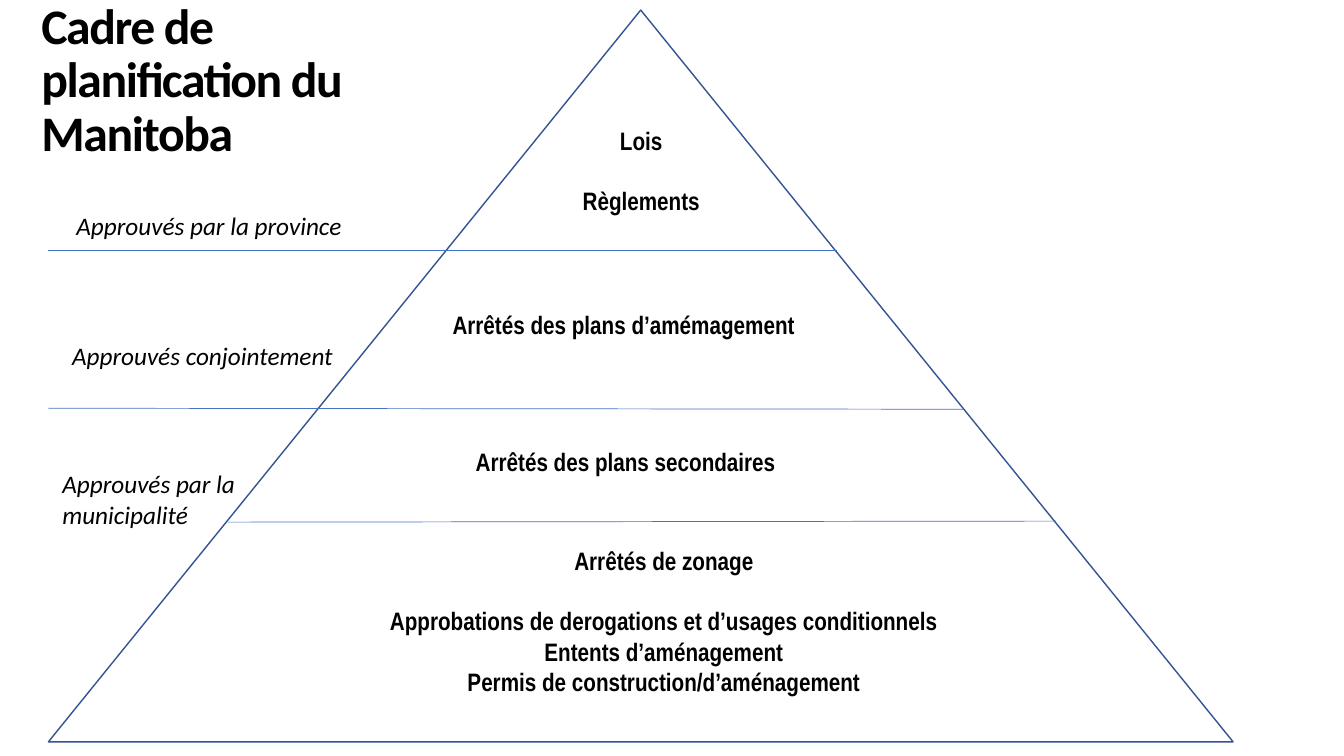
from lxml import etree
from pptx import Presentation
from pptx import util as u
from pptx.dml.color import RGBColor
from pptx.enum import shapes, text
from pptx.oxml import ns

BLACK = RGBColor(0, 0, 0)
WHITE = RGBColor(255, 255, 255)
EDGE = RGBColor(0x32, 0x54, 0x91)
RULE = RGBColor(0x44, 0x72, 0xC4)
LEFT, MID, RIGHT = text.PP_ALIGN.LEFT, text.PP_ALIGN.CENTER, text.PP_ALIGN.RIGHT
BODY, SIDE = "Arial Narrow", "Calibri"
LINE = 21.6  # height of one line of 18-point text, in points

TITLE = "Cadre de planification du Manitoba"
RULES = [  # start x, y, end x, y
    (0.48, 2.48, 8.3, 2.48),
    (0.48, 4.05, 9.56, 4.06),
    (2.26, 5.18, 10.47, 5.17),
]
# box, alignment, groups of lines (a line of space between groups)
LEVELS = [
    ((5.43, 1.19, 1.86, 1.01), MID, [["Lois"], ["Règlements"]]),
    ((4.39, 3.02, 4.1, 0.4), LEFT, [["Arrêtés des plans d’amémagement"]]),
    ((4.62, 4.38, 4.1, 0.4), LEFT, [["Arrêtés des plans secondaires"]]),
    ((2.7, 5.36, 7.77, 1.62), MID, [
        ["Arrêtés de zonage"],
        ["Approbations de derogations et d’usages conditionnels",
         "Entents d’aménagement",
         "Permis de construction/d’aménagement"]]),
]
NOTES = [
    ((0.66, 2.04, 3.36, 0.4), LEFT, [["Approuvés par la province"]]),
    ((0.4, 3.33, 3, 0.4), RIGHT, [["Approuvés conjointement"]]),
    ((0.52, 4.6, 1.94, 0.71), LEFT, [["Approuvés par la municipalité"]]),
]


def inch(nums):
    return [u.Inches(n) for n in nums]


def add_run(para, words, face, size, bold=False, slant=False):
    run = para.add_run()
    run.text = words
    font = run.font
    font.name, font.size = face, u.Pt(size)
    font.bold, font.italic = bold, slant
    font.color.rgb = BLACK
    return run


def add_text(slide, box, align, groups, face, **style):
    frame = slide.shapes.add_textbox(*inch(box)).text_frame
    frame.word_wrap = True
    para = None
    for group in groups:
        for row, words in enumerate(group):
            first = para is None
            para = frame.paragraphs[0] if first else frame.add_paragraph()
            para.alignment = align
            if row == 0 and not first:
                para.space_before = u.Pt(LINE)
            add_run(para, words, face, 18, **style)


def set_title(slide):
    title = slide.shapes.title
    title.left, title.top, title.width, title.height = inch((0.31, 0.27, 4.3, 1.39))
    frame = title.text_frame
    frame.word_wrap = True
    frame.auto_size = text.MSO_AUTO_SIZE.NONE
    frame.vertical_anchor = text.MSO_ANCHOR.BOTTOM
    para = frame.paragraphs[0]
    para.alignment, para.line_spacing = LEFT, 0.9
    run = add_run(para, TITLE, SIDE, 35.5, bold=True)
    run.font._element.set("spc", "-100")


def add_rule(slide, ends):
    rule = slide.shapes.add_connector(shapes.MSO_CONNECTOR.STRAIGHT, *inch(ends))
    rule.line.color.rgb, rule.line.width = RULE, u.Pt(0.5)
    etree.SubElement(rule._element.spPr, ns.qn("a:effectLst"))


def main():
    deck = Presentation()
    deck.slide_width, deck.slide_height = inch((13.33, 7.5))
    slide = deck.slides.add_slide(deck.slide_layouts[5])
    set_title(slide)

    cone = slide.shapes.add_shape(
        shapes.MSO_SHAPE.ISOSCELES_TRIANGLE, *inch((0.48, 0.1, 11.75, 7.26)))
    cone.shadow.inherit = False
    cone.fill.solid()
    cone.fill.fore_color.rgb = WHITE
    cone.line.color.rgb, cone.line.width = EDGE, u.Pt(1)

    for ends in RULES:
        add_rule(slide, ends)
    for level in LEVELS:
        add_text(slide, *level, BODY, bold=True)
    for note in NOTES:
        add_text(slide, *note, SIDE, slant=True)
    deck.save("out.pptx")


if __name__ == "__main__":
    main()
